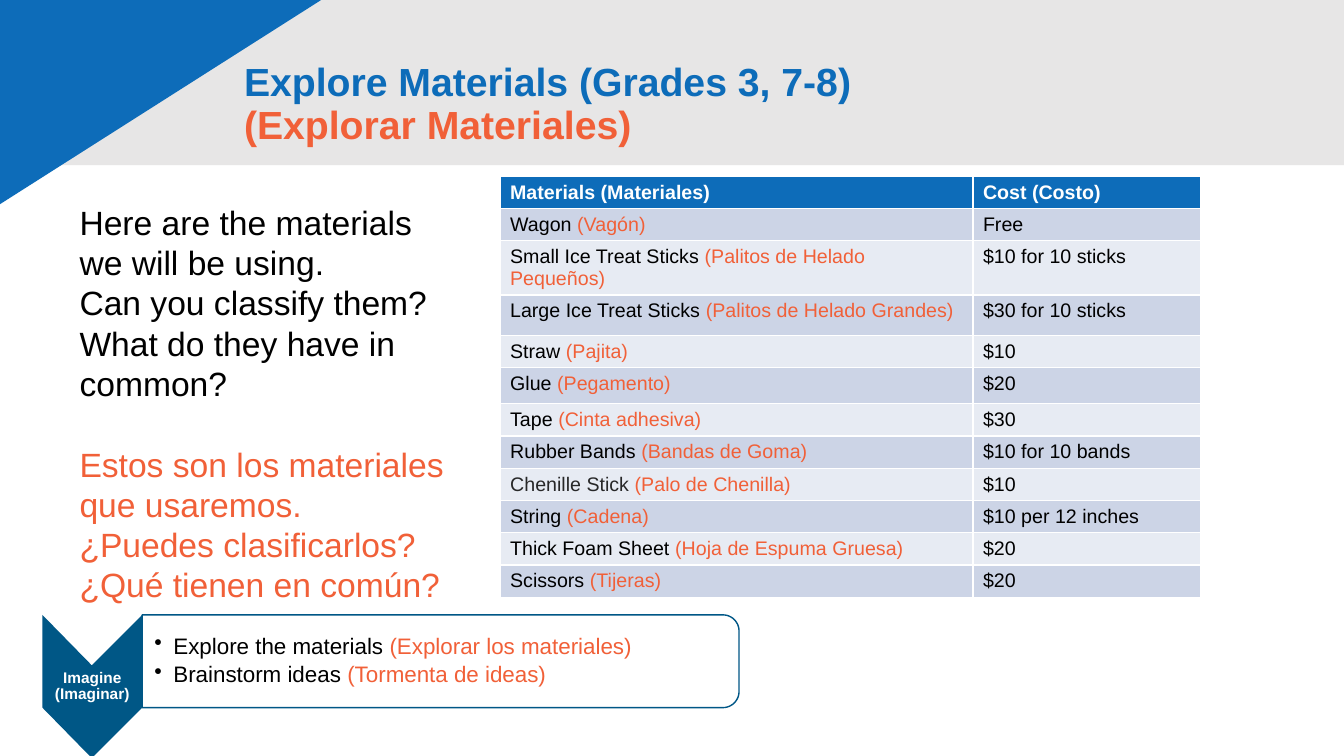
from math import cos, pi, sin

from lxml.etree import SubElement
from pptx import Presentation
from pptx.dml.color import RGBColor
from pptx.enum.shapes import MSO_SHAPE as Shape
from pptx.enum.text import MSO_ANCHOR as Anchor, MSO_AUTO_SIZE as AutoSize, PP_ALIGN as Align
from pptx.oxml.ns import qn
from pptx.util import Inches, Pt

BLUE, ORANGE, NAVY = "0D6CB9", "F16038", "005786"
BLACK, WHITE, GRAY = "000000", "FFFFFF", "E7E6E6"
BANDS = ("E7EBF3", "CCD4E6")

MATERIALS = [
    ("Wagon", "(Vagón)", "Free"),
    ("Small Ice Treat Sticks", "(Palitos de Helado Pequeños)", "$10 for 10 sticks"),
    ("Large Ice Treat Sticks", "(Palitos de Helado Grandes)", "$30 for 10 sticks"),
    ("Straw", "(Pajita)", "$10"),
    ("Glue", "(Pegamento)", "$20"),
    ("Tape", "(Cinta adhesiva)", "$30"),
    ("Rubber Bands", "(Bandas de Goma)", "$10 for 10 bands"),
    ("Chenille Stick", "(Palo de Chenilla)", "$10"),
    ("String", "(Cadena)", "$10 per 12 inches"),
    ("Thick Foam Sheet", "(Hoja de Espuma Gruesa)", "$20"),
    ("Scissors", "(Tijeras)", "$20"),
]
ROW_HEIGHT = 0.32
TALL_ROWS = {2: 0.53, 3: 0.4, 5: 0.36}

QUESTIONS = [
    ("Here are the materials we will be using.", BLACK),
    ("Can you classify them?", BLACK),
    ("What do they have in common?", BLACK),
    ("Estos son los materiales que usaremos.", ORANGE),
    ("¿Puedes clasificarlos?", ORANGE),
    ("¿Qué tienen en común?", ORANGE),
]
TASKS = [
    ("Explore the materials", "(Explorar los materiales)"),
    ("Brainstorm ideas", "(Tormenta de ideas)"),
]


def rgb(color):
    return RGBColor.from_string(color)


def add_text(paragraph, text, size, color, bold=False):
    run = paragraph.add_run()
    run.text = text
    font = run.font
    font.name, font.size, font.bold = "Arial", Pt(size), bold
    font.color.rgb = rgb(color)


def add_bilingual(paragraph, english, spanish, size, color=BLACK):
    add_text(paragraph, english + " ", size, color)
    add_text(paragraph, spanish, size, ORANGE)


def set_margins(frame, left, top, right, bottom):
    frame.margin_left, frame.margin_top = Inches(left), Inches(top)
    frame.margin_right, frame.margin_bottom = Inches(right), Inches(bottom)


def paint(shape, fill, line=None):
    shape.shadow.inherit = False
    shape.fill.solid()
    shape.fill.fore_color.rgb = rgb(fill)
    if line:
        shape.line.color.rgb = rgb(line)
        shape.line.width = Pt(1)
    else:
        shape.line.fill.background()


def add_preset(slide, kind, left, top, width, height, fill):
    shape = slide.shapes.add_shape(
        kind, Inches(left), Inches(top), Inches(width), Inches(height))
    paint(shape, fill)
    return shape


def add_outline(slide, points, fill, line=None):
    corners = [(Inches(x), Inches(y)) for x, y in points]
    builder = slide.shapes.build_freeform(*corners[0], scale=1.0)
    builder.add_line_segments(corners[1:], close=True)
    shape = builder.convert_to_shape()
    paint(shape, fill, line)
    shape.text_frame.word_wrap = True
    shape.text_frame.vertical_anchor = Anchor.MIDDLE
    return shape


def add_header(slide):
    add_preset(slide, Shape.RECTANGLE, -0.26, -0.19, 13.59, 1.83, GRAY)
    corner = add_preset(slide, Shape.RIGHT_TRIANGLE, -2.57, -1.72, 8.46, 5.38, BLUE)
    corner.rotation = 180
    corner.element.spPr.find(qn("a:xfrm")).set("flipH", "1")


def add_step_arrow(slide):
    left, middle, right = 0.42, 0.91, 1.41
    top, side, notch, tip = 6.1, 7.02, 6.6, 7.52
    arrow = add_outline(slide, [(right, top), (right, side), (middle, tip),
                                (left, side), (left, top), (middle, notch)], NAVY)
    frame = arrow.text_frame
    set_margins(frame, 0.01, 0.47, 0.01, 0.47)
    label = frame.paragraphs[0]
    label.alignment, label.line_spacing = Align.CENTER, 0.9
    add_text(label, "Imagine (Imaginar)", 11, WHITE, bold=True)


def add_task_panel(slide):
    """Draw the panel, rounded on its right side, with the bulleted tasks."""
    left, top, right, bottom, radius, steps = 1.41, 6.1, 7.33, 7.02, 0.16, 12
    angles = [pi / 2 * step / steps for step in range(steps + 1)]
    upper = [(right - radius + radius * sin(a), top + radius - radius * cos(a))
             for a in angles]
    lower = [(x, top + bottom - y) for x, y in reversed(upper)]
    panel = add_outline(slide, [(left, top), *upper, *lower, (left, bottom)], WHITE, NAVY)
    frame = panel.text_frame
    set_margins(frame, 0.12, 0.05, 0.05, 0.05)
    for index, (english, spanish) in enumerate(TASKS):
        task = frame.add_paragraph() if index else frame.paragraphs[0]
        task.alignment, task.line_spacing, task.space_after = Align.LEFT, 0.9, Pt(3)
        properties = task._p.get_or_add_pPr()
        properties.set("marL", str(Inches(0.19)))
        properties.set("indent", str(-Inches(0.19)))
        SubElement(properties, qn("a:buChar")).set("char", "•")
        add_bilingual(task, english, spanish, 16)


def add_questions(slide):
    box = slide.shapes.add_textbox(Inches(0.69), Inches(1.95), Inches(4.01), Inches(4.44))
    frame = box.text_frame
    frame.word_wrap = True
    for index, (question, color) in enumerate(QUESTIONS):
        paragraph = frame.add_paragraph() if index else frame.paragraphs[0]
        if index and color != QUESTIONS[index - 1][1]:
            paragraph.space_before = Pt(28.8)
        add_text(paragraph, question, 24, color)


def fill_title(slide):
    title = slide.shapes.title
    title.left, title.top = Inches(2.32), Inches(0.32)
    title.width, title.height = Inches(9.7), Inches(1.45)
    slide.shapes.element.append(title.element)  # in front of the header band
    frame = title.text_frame
    frame.vertical_anchor, frame.auto_size = Anchor.MIDDLE, AutoSize.NONE
    heading = frame.paragraphs[0]
    heading.alignment, heading.line_spacing = Align.LEFT, 0.9
    add_text(heading, "Explore Materials (Grades 3, 7-8)", 28, BLUE, bold=True)
    heading.add_line_break()
    add_text(heading, "(Explorar Materiales)", 28, ORANGE, bold=True)


def add_materials_table(slide):
    heights = [TALL_ROWS.get(i, ROW_HEIGHT) for i in range(len(MATERIALS) + 1)]
    table = slide.shapes.add_table(
        len(heights), 2, Inches(4.96), Inches(1.75),
        Inches(6.95), Inches(sum(heights))).table
    for column, width in zip(table.columns, (4.69, 2.26)):
        column.width = Inches(width)
    for index, (row, height) in enumerate(zip(table.rows, heights)):
        row.height = Inches(height)
        for cell in row.cells:
            cell.fill.solid()
            cell.fill.fore_color.rgb = rgb(BANDS[index % 2] if index else BLUE)
    for column, heading in enumerate(("Materials (Materiales)", "Cost (Costo)")):
        add_text(table.cell(0, column).text_frame.paragraphs[0], heading, 14, WHITE, bold=True)
    for row, (english, spanish, cost) in enumerate(MATERIALS, start=1):
        color = "272728" if english == "Chenille Stick" else BLACK
        material, price = (table.cell(row, c).text_frame.paragraphs[0] for c in (0, 1))
        add_bilingual(material, english, spanish, 14, color)
        add_text(price, cost, 14, BLACK)


def main():
    deck = Presentation()
    deck.slide_width, deck.slide_height = Inches(13.33), Inches(7.5)
    slide = deck.slides.add_slide(deck.slide_layouts[5])
    add_header(slide)
    add_step_arrow(slide)
    add_task_panel(slide)
    add_questions(slide)
    fill_title(slide)
    add_materials_table(slide)
    deck.save("out.pptx")


if __name__ == "__main__":
    main()
